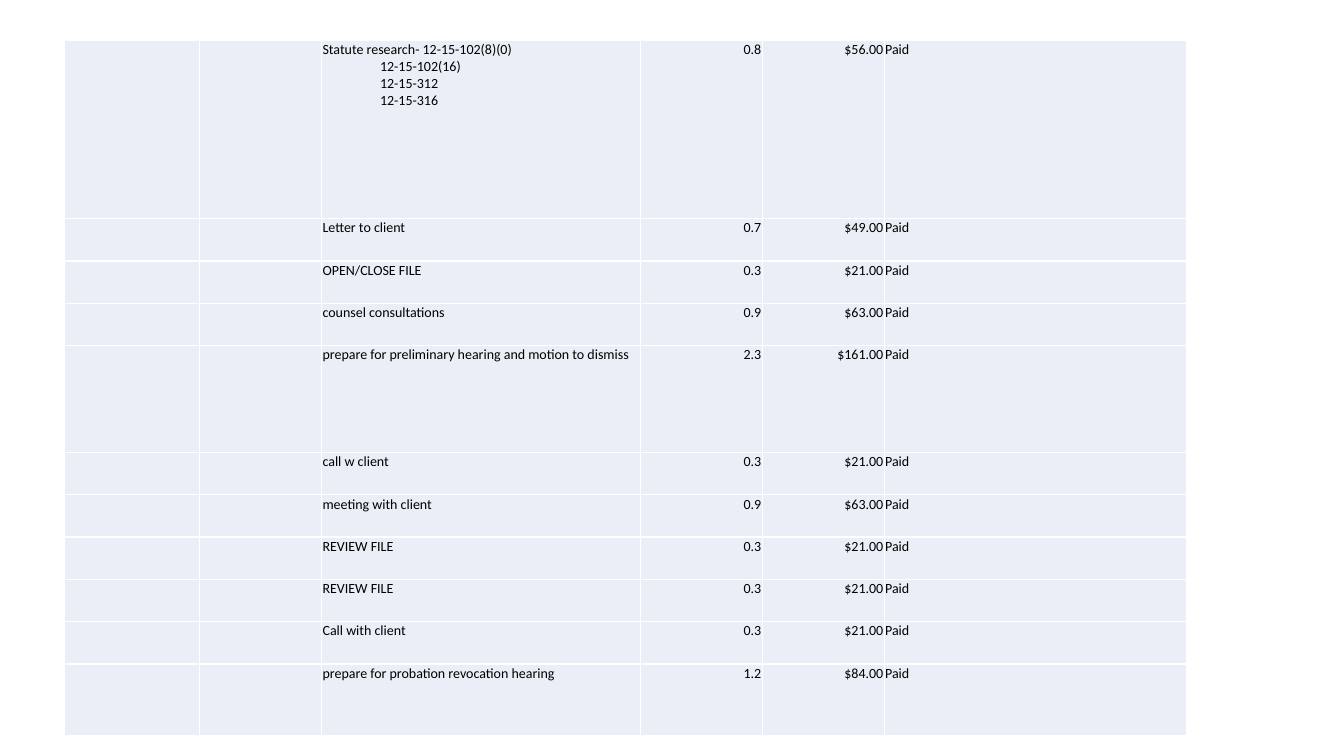
from lxml import etree
from pptx import Presentation
from pptx.dml.color import RGBColor
from pptx.enum import text
from pptx.oxml.ns import qn
from pptx.util import Inches, Pt

CELL_FILL = RGBColor(0xEA, 0xEF, 0xF7)
BLACK = RGBColor(0, 0, 0)
BORDER = RGBColor(0xFF, 0xFF, 0xFF)

HOURLY_RATE = 70
COLUMN_WIDTHS = [1.34, 1.21, 3.16, 1.21, 1.21, 3]
STATUTES = ["Statute research- 12-15-102(8)(0)", "12-15-102(16)", "12-15-312", "12-15-316"]

# Task, hours, row height
ENTRIES = [
    ("\n".join(STATUTES), 0.8, 1.77),
    ("Letter to client", 0.7, 0.42),
    ("OPEN/CLOSE FILE", 0.3, 0.42),
    ("counsel consultations", 0.9, 0.42),
    ("prepare for preliminary hearing and motion to dismiss", 2.3, 1.06),
    ("call w client", 0.3, 0.42),
    ("meeting with client", 0.9, 0.42),
    ("REVIEW FILE", 0.3, 0.42),
    ("REVIEW FILE", 0.3, 0.42),
    ("Call with client", 0.3, 0.42),
    ("prepare for probation revocation hearing", 1.2, 0.71),
]


def add_borders(cell):
    properties = cell._tc.get_or_add_tcPr()
    for position, side in enumerate(("a:lnL", "a:lnR", "a:lnT", "a:lnB")):
        line = etree.Element(qn(side), w=str(Pt(1)))
        fill = etree.SubElement(line, qn("a:solidFill"))
        etree.SubElement(fill, qn("a:srgbClr"), val=str(BORDER))
        properties.insert(position, line)


presentation = Presentation()
presentation.slide_width = Inches(13.33)
presentation.slide_height = Inches(7.5)
slide = presentation.slides.add_slide(presentation.slide_layouts[6])

# Billing table
frame = slide.shapes.add_table(
    len(ENTRIES), len(COLUMN_WIDTHS), Inches(0.64), Inches(0.4), Inches(11.13), Inches(6.9))
table = frame.table
table.first_row = False
table.horz_banding = False
for column, width in zip(table.columns, COLUMN_WIDTHS):
    column.width = Inches(width)

# One row per billed task
for row, (task, hours, height) in zip(table.rows, ENTRIES):
    row.height = Inches(height)
    values = ["", "", task, str(hours), f"${hours * HOURLY_RATE:.2f}", "Paid"]
    for index, (cell, value) in enumerate(zip(row.cells, values)):
        cell.text = value
        cell.fill.solid()
        cell.fill.fore_color.rgb = CELL_FILL
        cell.margin_left = cell.margin_right = cell.margin_top = Inches(0.01)
        cell.margin_bottom = 0
        add_borders(cell)
        for number, paragraph in enumerate(cell.text_frame.paragraphs):
            paragraph.font.name = "Calibri"
            paragraph.font.size = Pt(10)
            paragraph.font.color.rgb = BLACK
            if index in (3, 4):
                paragraph.alignment = text.PP_ALIGN.RIGHT
            if number > 0:  # statute numbers are indented below the task
                paragraph._p.get_or_add_pPr().set("marL", str(Inches(0.57)))

presentation.save("out.pptx")
